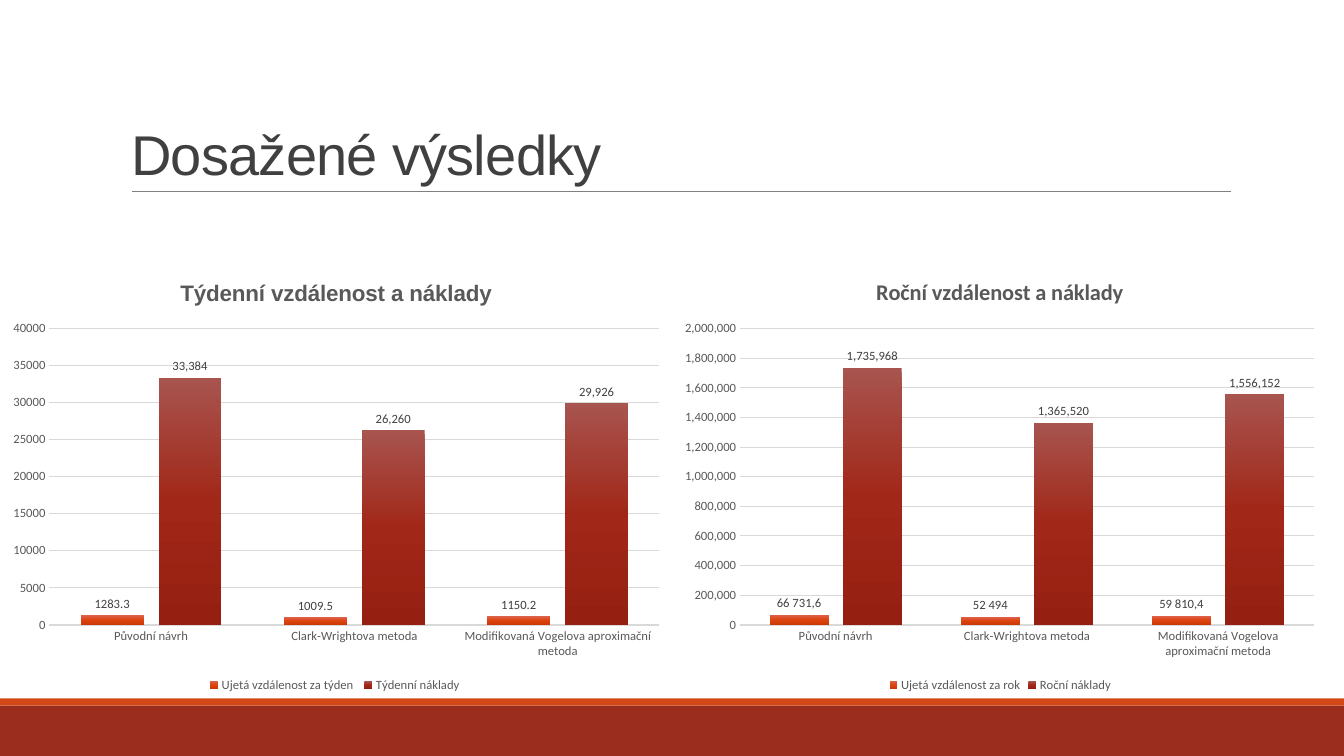
from copy import deepcopy
from dataclasses import dataclass

from lxml.etree import SubElement
from pptx import Presentation
from pptx.chart.data import CategoryChartData
from pptx.dml.color import RGBColor
from pptx.enum.chart import XL_CHART_TYPE as ChartType
from pptx.enum.chart import XL_LABEL_POSITION as LabelPosition
from pptx.enum.chart import XL_LEGEND_POSITION as LegendPosition
from pptx.enum.chart import XL_TICK_MARK as TickMark
from pptx.enum.shapes import MSO_CONNECTOR as Connector
from pptx.enum.shapes import MSO_SHAPE as Shape
from pptx.enum.text import MSO_ANCHOR as Anchor
from pptx.enum.text import PP_ALIGN as Align
from pptx.oxml import parse_xml
from pptx.oxml.ns import qn
from pptx.util import Inches, Pt


@dataclass(frozen=True)
class Theme:
    heading_font: str = "Arial"
    body_font: str = "Calibri"
    heading: str = "404040"
    muted: str = "595959"
    text: str = "000000"
    grid: str = "D9D9D9"
    rule: str = "808080"
    band: str = "9B2D1F"
    stripe: str = "D34817"
    distance: tuple = ("DD624D", "DC430E", "CC3804")
    costs: tuple = ("A8544F", "A12819", "951F11")
    title_size: int = 40
    chart_title_size: int = 16
    chart_size: int = 10
    label_size: int = 9


THEME = Theme()
METHODS = ("Původní návrh", "Clark-Wrightova metoda",
           "Modifikovaná Vogelova aproximační metoda")
THOUSANDS = "#,##0"
CHART_HEIGHT = 4.32
CHART_NS = "http://schemas.openxmlformats.org/drawingml/2006/chart"


def color(value):
    return RGBColor.from_string(value)


def style_font(font, size, value, name=THEME.body_font, bold=False):
    font.size, font.name, font.bold = Pt(size), name, bold
    font.color.rgb = color(value)


def add_band(page, top, height, value):
    band = page.shapes.add_shape(Shape.RECTANGLE, 0, Inches(top),
                                 Inches(13.33), Inches(height))
    band.shadow.inherit = False
    band.fill.solid()
    band.fill.fore_color.rgb = color(value)
    band.line.fill.background()


def add_rule(page, left, right, top):
    rule = page.shapes.add_connector(Connector.STRAIGHT, Inches(left), Inches(top),
                                     Inches(right), Inches(top))
    rule.line.color.rgb = color(THEME.rule)
    rule.line.width = Pt(0.5)
    SubElement(rule._element.spPr, qn("a:effectLst"))


def set_title(page, text):
    title = page.shapes.title
    title.left, title.top = Inches(1.2), Inches(0.31)
    title.width, title.height = Inches(11), Inches(1.59)
    title.text_frame.text = text
    title.text_frame.vertical_anchor = Anchor.BOTTOM
    para = title.text_frame.paragraphs[0]
    para.alignment, para.line_spacing = Align.LEFT, 0.85
    span = para.runs[0]
    style_font(span.font, THEME.title_size, THEME.heading, THEME.heading_font)
    span.font._element.set("spc", "-50")


def place_part(part, chart_width, **inches):
    """Place a chart part by inches from the chart's top left corner."""
    for layout in part.findall(qn("c:layout")):
        part.remove(layout)
    full = {"x": chart_width, "w": chart_width, "y": CHART_HEIGHT, "h": CHART_HEIGHT}
    inner = '<c:layoutTarget val="inner"/>' if "w" in inches else ""
    modes = "".join(f'<c:{key}Mode val="edge"/>' for key in "xy")
    places = "".join(f'<c:{key} val="{value / full[key]}"/>'
                     for key, value in inches.items())
    layout = parse_xml(f'<c:layout xmlns:c="{CHART_NS}"><c:manualLayout>'
                       f'{inner}{modes}{places}</c:manualLayout></c:layout>')
    part.insert(0 if part.find(qn("c:tx")) is None else 1, layout)


def fill_gradient(series, stops):
    fill = series.format.fill
    fill.gradient()
    fill.gradient_angle = 270
    stop_list = series._element.find(".//" + qn("a:gsLst"))
    stop_list.insert(1, deepcopy(stop_list[0]))
    for index, (stop, value) in enumerate(zip(fill.gradient_stops, stops)):
        stop.position = index / 2
        stop.color.rgb = color(value)


def label_series(series, number_format, point_texts=()):
    labels = series.data_labels
    labels.show_value = True
    labels.position = LabelPosition.OUTSIDE_END
    labels.number_format = number_format
    labels.number_format_is_linked = False
    style_font(labels.font, THEME.label_size, THEME.heading)
    for index, text in enumerate(point_texts):
        label = series.points[index].data_label
        label.text_frame.text = text
        label.position = LabelPosition.OUTSIDE_END
        span = label.text_frame.paragraphs[0].runs[0]
        style_font(span.font, THEME.label_size, THEME.heading)


def style_axes(chart, maximum, step, number_format):
    for axis in (chart.category_axis, chart.value_axis):
        axis.major_tick_mark = axis.minor_tick_mark = TickMark.NONE
        style_font(axis.tick_labels.font, THEME.label_size, THEME.muted)
    category_line = chart.category_axis.format.line
    category_line.color.rgb = color(THEME.grid)
    category_line.width = Pt(1)

    axis = chart.value_axis
    axis.minimum_scale, axis.maximum_scale, axis.major_unit = 0, maximum, step
    axis.tick_labels.number_format = number_format
    axis.tick_labels.number_format_is_linked = False
    axis.format.line.fill.background()
    axis.major_gridlines.format.line.color.rgb = color(THEME.grid)
    axis.major_gridlines.format.line.width = Pt(0.75)


def add_column_chart(page, left, width, title, title_font, title_at, plot_x, plot_width,
                     distance, costs, maximum, step, number_format, distance_texts=()):
    data = CategoryChartData()
    data.categories = METHODS
    for name, values in (distance, costs):
        data.add_series(name, values)
    chart = page.shapes.add_chart(ChartType.COLUMN_CLUSTERED, Inches(left), Inches(2.59),
                                  Inches(width), Inches(CHART_HEIGHT), data).chart
    style_font(chart.font, THEME.chart_size, THEME.text)

    # Chart title and plot area
    chart.has_title = True
    frame = chart.chart_title.text_frame
    frame.text = title
    style_font(frame.paragraphs[0].runs[0].font, THEME.chart_title_size, THEME.muted,
               title_font, bold=True)
    title_x, title_y = title_at
    place_part(chart.chart_title._element, width, x=title_x, y=title_y)
    place_part(chart._chartSpace.chart.plotArea, width,
               x=plot_x, y=0.67, w=plot_width, h=2.94)

    # Legend
    chart.has_legend = True
    chart.legend.position = LegendPosition.BOTTOM
    chart.legend.include_in_layout = False
    style_font(chart.legend.font, THEME.label_size, THEME.muted)

    # Axes and columns
    style_axes(chart, maximum, step, number_format)
    plot = chart.plots[0]
    plot.gap_width, plot.overlap, plot.vary_by_categories = 100, -24, False
    distance_series, cost_series = plot.series
    fill_gradient(distance_series, THEME.distance)
    fill_gradient(cost_series, THEME.costs)
    label_series(distance_series, number_format, distance_texts)
    label_series(cost_series, THOUSANDS)


def main():
    deck = Presentation()
    deck.slide_width, deck.slide_height = Inches(13.33), Inches(7.5)
    page = deck.slides.add_slide(deck.slide_layouts[5])

    # Frame and heading
    add_band(page, 7, 0.5, THEME.band)
    add_band(page, 6.93, 0.07, THEME.stripe)
    add_rule(page, 1.31, 12.21, 1.9)
    set_title(page, "Dosažené výsledky")

    # Weekly and yearly results
    add_column_chart(
        page, 0, 6.67, "Týdenní vzdálenost a náklady", THEME.heading_font,
        title_at=(1.75, 0.14), plot_x=0.49, plot_width=6.05,
        distance=("Ujetá vzdálenost za týden ", (1283.3, 1009.5, 1150.2)),
        costs=("Týdenní náklady ", (33384, 26260, 29926)),
        maximum=40000, step=5000, number_format="General")
    add_column_chart(
        page, 6.67, 6.5, "Roční vzdálenost a náklady", THEME.body_font,
        title_at=(1.98, 0.12), plot_x=0.67, plot_width=5.69,
        distance=("Ujetá vzdálenost za rok", (66732, 52494, 59810)),
        costs=("Roční náklady", (1735968, 1365520, 1556152)),
        maximum=2000000, step=200000, number_format=THOUSANDS,
        distance_texts=("66 731,6", "52 494", "59 810,4"))

    deck.save("out.pptx")


if __name__ == "__main__":
    main()
